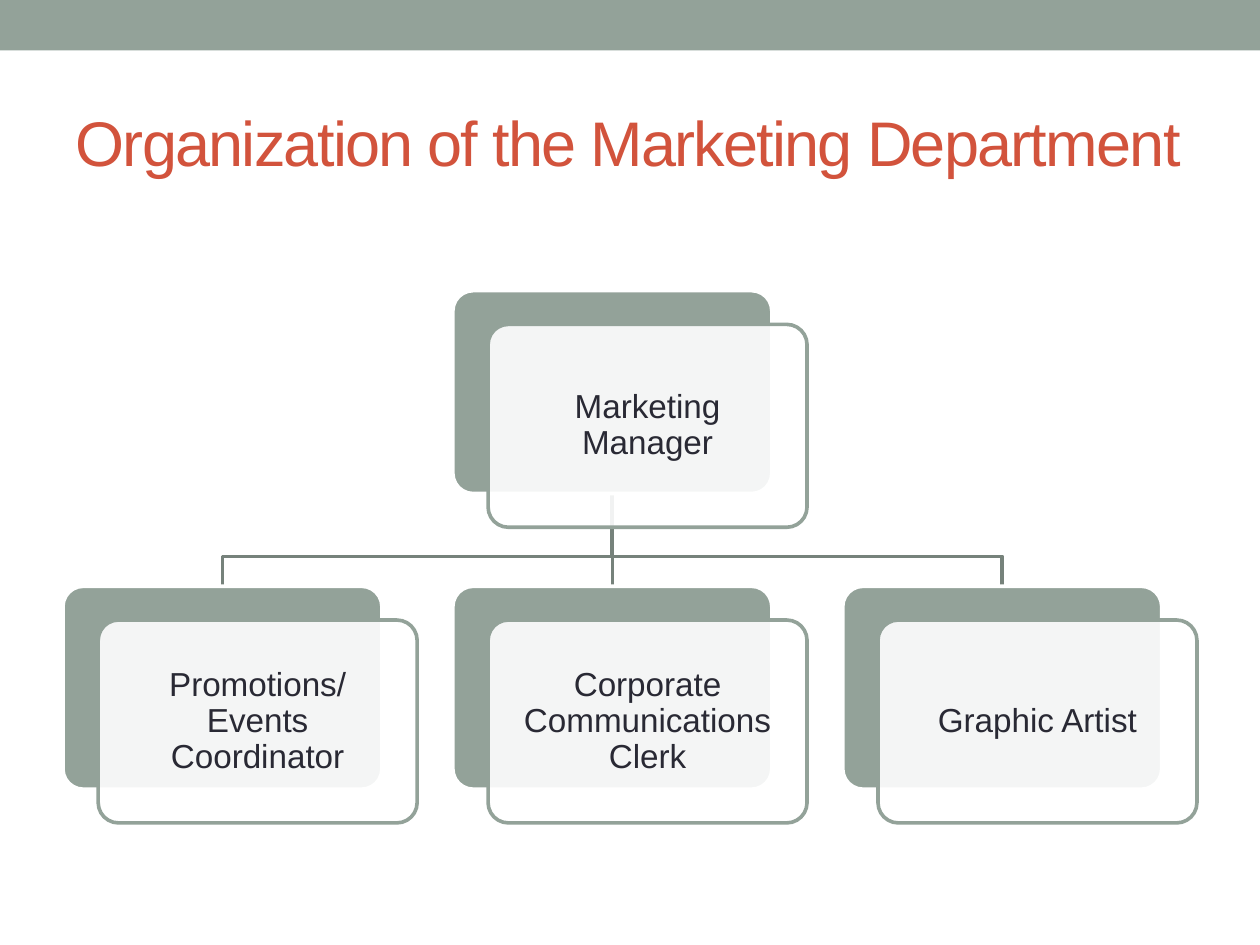
from lxml import etree
from pptx import Presentation
from pptx.dml.color import RGBColor
from pptx.enum.shapes import MSO_CONNECTOR, MSO_SHAPE
from pptx.enum.text import MSO_ANCHOR, MSO_AUTO_SIZE, PP_ALIGN
from pptx.oxml.ns import qn
from pptx.util import Cm, Pt

RECTANGLE = MSO_SHAPE.RECTANGLE
ROUNDED = MSO_SHAPE.ROUNDED_RECTANGLE
STRAIGHT = MSO_CONNECTOR.STRAIGHT
MIDDLE = MSO_ANCHOR.MIDDLE
NO_AUTOFIT = MSO_AUTO_SIZE.NONE
LEFT, CENTER = PP_ALIGN.LEFT, PP_ALIGN.CENTER

TITLE_ONLY = 5
SLIDE_WIDTH, SLIDE_HEIGHT = 25.4, 19.05

# Org chart grid, in cm
MARGIN = 1.27
BOX_WIDTH, BOX_HEIGHT = 6.43, 4.09
CARD_SHIFT_X, CARD_SHIFT_Y = 0.71, 0.68
COLUMN_PITCH = 7.86
MANAGER_TOP, TEAM_TOP = 5.86, 11.82
BRANCH_Y = 11.22

MANAGER = "Marketing Manager"
TEAM = [
    "Promotions/Events Coordinator",
    "Corporate Communications Clerk",
    "Graphic Artist",
]


def color(hex_code):
    return RGBColor.from_string(hex_code)


def write_text(frame, text, size, hex_code, font="Arial", align=LEFT,
               line_spacing=1.0, tracking=None, inset=None):
    """Fill the frame; tracking is in points and inset in cm."""
    frame.word_wrap = True
    frame.auto_size = NO_AUTOFIT
    frame.vertical_anchor = MIDDLE
    if inset is not None:
        frame.margin_left = frame.margin_right = Cm(inset)
        frame.margin_top = frame.margin_bottom = Cm(inset)
    paragraph = frame.paragraphs[0]
    paragraph.alignment = align
    paragraph.line_spacing = line_spacing
    run = paragraph.add_run()
    run.text = text
    run.font.name = font
    run.font.size = Pt(size)
    run.font.color.rgb = color(hex_code)
    if tracking is not None:
        run.font._element.set("spc", str(int(tracking * 100)))


class OrgChartSlide:
    SAGE = "93A299"
    BRANCH = "76827B"
    WHITE = "FFFFFF"
    INK = "292934"
    HEADING = "D2533C"
    LINE_WIDTH = 2.08

    def __init__(self, presentation):
        layout = presentation.slide_layouts[TITLE_ONLY]
        self.slide = presentation.slides.add_slide(layout)
        self.shapes = self.slide.shapes

    def title(self, text, left, top, width, height):
        heading = self.shapes.title
        heading.left, heading.top = Cm(left), Cm(top)
        heading.width, heading.height = Cm(width), Cm(height)
        write_text(heading.text_frame, text, 36, self.HEADING, tracking=-1)

    def block(self, kind, left, top, width, height, fill, outline=None):
        block = self.shapes.add_shape(
            kind, Cm(left), Cm(top), Cm(width), Cm(height))
        block.shadow.inherit = False
        block.fill.solid()
        block.fill.fore_color.rgb = color(fill)
        if outline:
            self.stroke(block, outline)
        else:
            block.line.fill.background()
        return block

    def stroke(self, shape, hex_code):
        shape.line.color.rgb = color(hex_code)
        shape.line.width = Pt(self.LINE_WIDTH)

    def position(self, role, left, top):
        """Draw one post: a solid box with a translucent card in front."""
        back = self.block(ROUNDED, left, top, BOX_WIDTH, BOX_HEIGHT,
                          self.SAGE, self.WHITE)
        card = self.block(ROUNDED, left + CARD_SHIFT_X, top + CARD_SHIFT_Y,
                          BOX_WIDTH, BOX_HEIGHT, self.WHITE, self.SAGE)
        for box in (back, card):
            box.adjustments[0] = 0.1
        fill_color = card.fill._xPr.find(qn("a:solidFill"))[0]
        etree.SubElement(fill_color, qn("a:alpha"), val="90000")
        write_text(card.text_frame, role, 19, self.INK, align=CENTER,
                   line_spacing=0.9, inset=0.3)

    def straight_branch(self, x, start_y, end_y):
        branch = self.shapes.add_connector(
            STRAIGHT, Cm(x), Cm(start_y), Cm(x), Cm(end_y))
        self.stroke(branch, self.BRANCH)
        etree.SubElement(branch._element.spPr, qn("a:effectLst"))

    def elbow_branch(self, start_x, start_y, end_x, end_y):
        builder = self.shapes.build_freeform(Cm(start_x), Cm(start_y))
        corners = [(start_x, BRANCH_Y), (end_x, BRANCH_Y), (end_x, end_y)]
        builder.add_line_segments(
            [(Cm(x), Cm(y)) for x, y in corners], close=False)
        branch = builder.convert_to_shape()
        branch.shadow.inherit = False
        branch.fill.background()
        self.stroke(branch, self.BRANCH)


def main():
    presentation = Presentation()
    presentation.slide_width = Cm(SLIDE_WIDTH)
    presentation.slide_height = Cm(SLIDE_HEIGHT)

    chart = OrgChartSlide(presentation)
    chart.block(RECTANGLE, 0, 0, SLIDE_WIDTH, 1.02, chart.SAGE)
    chart.title("Organization of the Marketing Department",
                MARGIN, 1.47, SLIDE_WIDTH - 2 * MARGIN, 2.74)

    team_lefts = [MARGIN + i * COLUMN_PITCH for i in range(len(TEAM))]
    manager_left = team_lefts[1]
    manager_x = manager_left + BOX_WIDTH / 2
    manager_bottom = MANAGER_TOP + BOX_HEIGHT

    for left in team_lefts:
        member_x = left + BOX_WIDTH / 2
        if left == manager_left:
            chart.straight_branch(manager_x, manager_bottom, TEAM_TOP)
        else:
            chart.elbow_branch(manager_x, manager_bottom, member_x, TEAM_TOP)

    chart.position(MANAGER, manager_left, MANAGER_TOP)
    for role, left in zip(TEAM, team_lefts):
        chart.position(role, left, TEAM_TOP)

    presentation.save("out.pptx")


if __name__ == "__main__":
    main()
